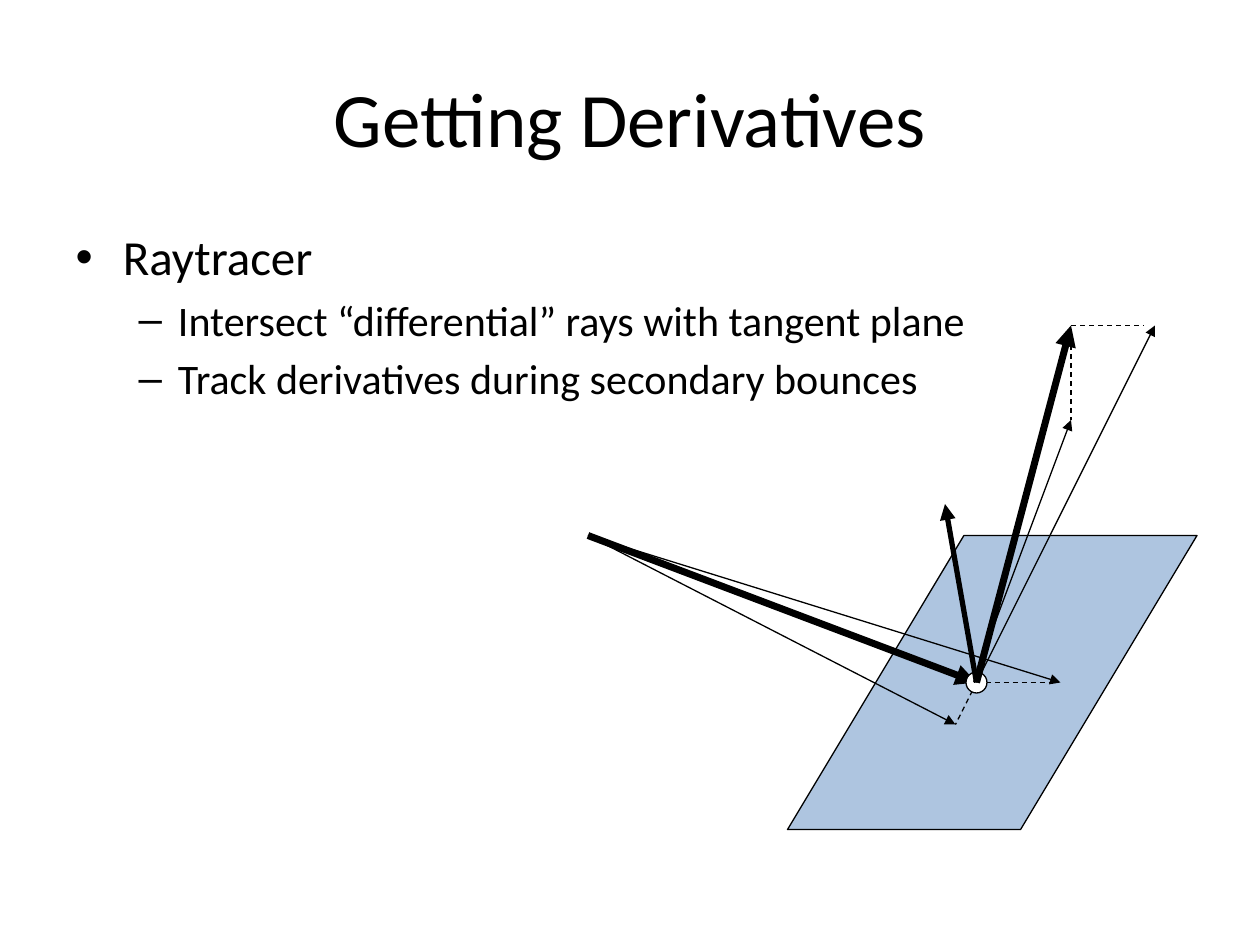
from dataclasses import dataclass

import pptx
import pptx.dml.color
import pptx.enum.dml
import pptx.enum.shapes
import pptx.oxml.ns
import pptx.util

Pt = pptx.util.Pt
RGBColor = pptx.dml.color.RGBColor
SHAPE = pptx.enum.shapes.MSO_SHAPE

BLACK = RGBColor(0x00, 0x00, 0x00)
WHITE = RGBColor(0xFF, 0xFF, 0xFF)
PLANE_BLUE = RGBColor(0x4F, 0x81, 0xBD)
FONT = "Calibri"
THIN = 0.75

Point = tuple[float, float]

# Key points of the ray diagram
EYE: Point = (336, 306)
HIT: Point = (558, 390)
HIT_TOP: Point = (558, 384)
REFLECTED: Point = (612, 186)
REFLECTED_DY: Point = (612, 240)
HIT_DY: Point = (546, 414)


@dataclass
class Ray:
    start: Point
    end: Point
    width: float = THIN
    dashed: bool = False


RAYS_BELOW_HIT = [
    Ray(EYE, HIT, 4),
    Ray(EYE, HIT_DY),
    Ray(EYE, (606, 390)),
    Ray(HIT, HIT_DY, dashed=True),
    Ray(HIT, (600, 390), dashed=True),
]
RAYS_ABOVE_HIT = [
    Ray(HIT, (540, 288), 3),  # surface normal
    Ray(HIT, (660, 186)),
    Ray(HIT_TOP, REFLECTED_DY),
    Ray(HIT, REFLECTED, 4),
    Ray(REFLECTED, (654, 186), dashed=True),
    Ray((612, 192), REFLECTED_DY, dashed=True),
]


def write_text(paragraph, text: str, *, size: float, level: int = 0) -> None:
    paragraph.level = level
    run = paragraph.add_run()
    run.text = text
    run.font.name = FONT
    run.font.size = Pt(size)
    run.font.color.rgb = BLACK


def place(shape, left: float, top: float, width: float, height: float) -> None:
    shape.left, shape.top = Pt(left), Pt(top)
    shape.width, shape.height = Pt(width), Pt(height)


def draw_shape(slide, kind, box: tuple[float, float, float, float], fill: RGBColor):
    shape = slide.shapes.add_shape(kind, *map(Pt, box))
    shape.shadow.inherit = False
    shape.fill.solid()
    shape.fill.fore_color.rgb = fill
    shape.line.color.rgb = BLACK
    shape.line.width = Pt(THIN)
    return shape


def draw_ray(slide, ray: Ray) -> None:
    connector = slide.shapes.add_connector(
        pptx.enum.shapes.MSO_CONNECTOR.STRAIGHT, *map(Pt, ray.start + ray.end))
    connector.line.color.rgb = BLACK
    connector.line.width = Pt(ray.width)
    properties = connector._element.spPr
    if ray.dashed:
        connector.line.dash_style = pptx.enum.dml.MSO_LINE.DASH
    else:
        line = connector.line._get_or_add_ln()
        arrowhead = pptx.oxml.ns.qn("a:tailEnd")
        line.append(line.makeelement(arrowhead, {"type": "triangle"}))
    properties.append(properties.makeelement(pptx.oxml.ns.qn("a:effectLst"), {}))


def main() -> None:
    presentation = pptx.Presentation()
    presentation.slide_width, presentation.slide_height = Pt(720), Pt(540)
    slide = presentation.slides.add_slide(presentation.slide_layouts[1])

    # Title and list
    title, body = slide.placeholders
    place(title, 36, 21.6, 648, 90)
    write_text(title.text_frame.paragraphs[0], "Getting Derivatives", size=44)
    place(body, 36, 126, 540, 356.4)
    frame = body.text_frame
    frame.word_wrap = True
    write_text(frame.paragraphs[0], "Raytracer", size=28)
    for text in ("Intersect “differential” rays with tangent plane",
                 "Track derivatives during secondary bounces"):
        write_text(frame.add_paragraph(), text, size=24, level=1)

    # Translucent tangent plane
    plane = draw_shape(slide, SHAPE.PARALLELOGRAM, (450, 306, 234, 168), PLANE_BLUE)
    plane.adjustments[0] = 0.6
    color = plane.fill._xPr.find(".//" + pptx.oxml.ns.qn("a:srgbClr"))
    color.append(color.makeelement(pptx.oxml.ns.qn("a:alpha"), {"val": "46000"}))

    # Rays around the hit point
    for ray in RAYS_BELOW_HIT:
        draw_ray(slide, ray)
    draw_shape(slide, SHAPE.OVAL, (HIT[0] - 6, HIT[1] - 6, 12, 12), WHITE)
    for ray in RAYS_ABOVE_HIT:
        draw_ray(slide, ray)

    presentation.save("out.pptx")


if __name__ == "__main__":
    main()
